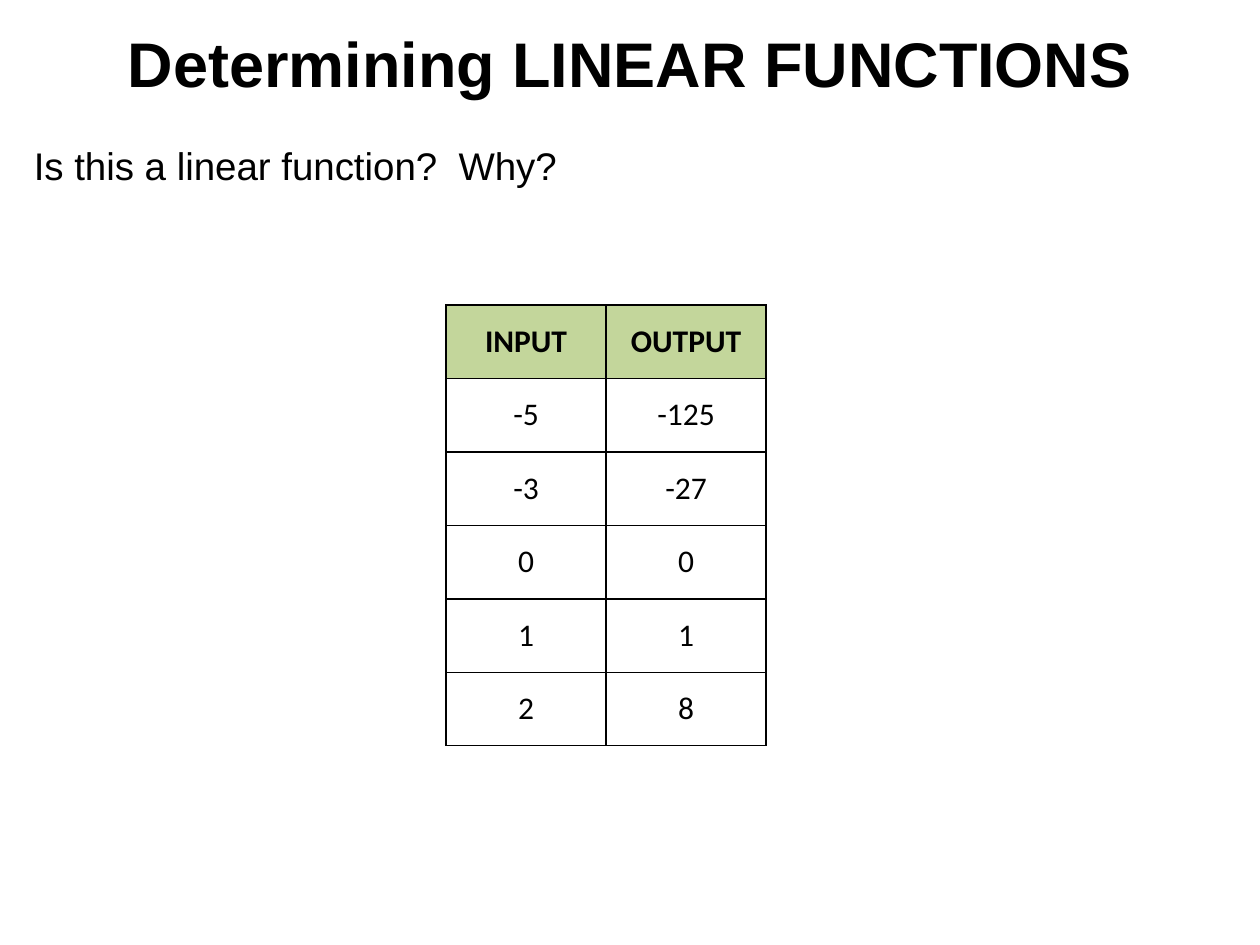
from lxml import etree
from pptx import Presentation
from pptx.dml.color import RGBColor
from pptx.enum import text
from pptx.oxml.ns import qn
from pptx.util import Inches, Pt

BLACK, WHITE, GREEN = "000000", "FFFFFF", "C3D69B"
ROWS = [
    ("INPUT", "OUTPUT"),
    ("-5", "-125"),
    ("-3", "-27"),
    ("0", "0"),
    ("1", "1"),
    ("2", "8"),
]


def color(value):
    return RGBColor.from_string(value)


def write(frame, words, size=18, font="Calibri", bold=False, ink=BLACK,
          align=text.PP_ALIGN.CENTER, before=0, after=0):
    para = frame.paragraphs[0]
    para.alignment = align
    para.space_before, para.space_after = Pt(before), Pt(after)
    span = para.add_run()
    span.text = words
    span.font.size, span.font.name, span.font.bold = Pt(size), font, bold
    span.font.color.rgb = color(ink)


def add_text(slide, box, words, anchor=text.MSO_ANCHOR.TOP, **style):
    frame = slide.shapes.add_textbox(*map(Inches, box)).text_frame
    frame.word_wrap = True
    frame.vertical_anchor = anchor
    write(frame, words, font="Arial", **style)


def add_borders(cell, ink=BLACK, width=1):
    properties = cell._tc.get_or_add_tcPr()
    # Border lines must come before the fill in the cell properties
    for position, side in enumerate(("a:lnL", "a:lnR", "a:lnT", "a:lnB")):
        line = etree.Element(qn(side), w=str(Pt(width)))
        fill = etree.SubElement(line, qn("a:solidFill"))
        etree.SubElement(fill, qn("a:srgbClr"), val=ink)
        properties.insert(position, line)


def add_function_table(slide, box, rows):
    left, top, width, height = map(Inches, box)
    table = slide.shapes.add_table(
        len(rows), len(rows[0]), left, top, width, height).table
    table.horz_banding = False
    for r, row in enumerate(rows):
        for c, value in enumerate(row):
            cell = table.cell(r, c)
            cell.vertical_anchor = text.MSO_ANCHOR.MIDDLE
            cell.fill.solid()
            cell.fill.fore_color.rgb = color(GREEN if r == 0 else WHITE)
            add_borders(cell)
            write(cell.text_frame, value, bold=r == 0)


def main():
    deck = Presentation()
    deck.slide_width, deck.slide_height = Inches(10), Inches(7.5)
    slide = deck.slides.add_slide(deck.slide_layouts[6])

    # Title
    add_text(slide, (0, 0.08, 10, 0.83), "Determining LINEAR FUNCTIONS",
             anchor=text.MSO_ANCHOR.MIDDLE, size=36, bold=True)
    # Question
    add_text(slide, (0.17, 1.08, 9.67, 0.83),
             "Is this a linear function?  Why?", size=22,
             align=text.PP_ALIGN.LEFT, before=4.4, after=24)
    # Input and output values
    add_function_table(slide, (3.54, 2.42, 2.54, 3.5), ROWS)

    deck.save("out.pptx")


if __name__ == "__main__":
    main()
